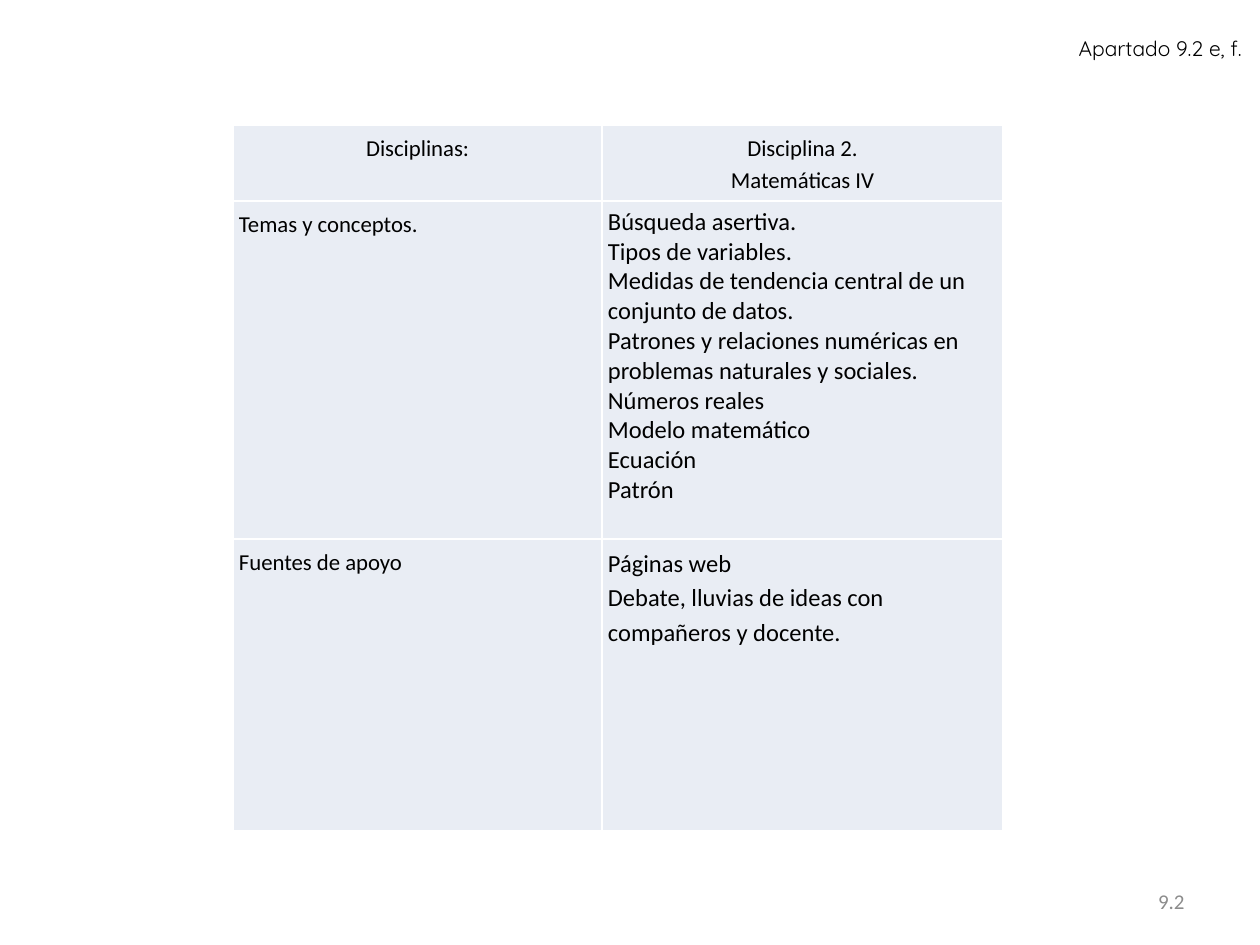
from lxml.etree import SubElement
from pptx import Presentation
from pptx.dml.color import RGBColor
from pptx.enum.text import MSO_ANCHOR, PP_ALIGN
from pptx.oxml.ns import qn
from pptx.util import Emu, Pt

PX = 914400 // 126

# Content: (paragraphs, size, alignment, line spacing) for each cell
LEFT, CENTER, RIGHT, JUSTIFY = PP_ALIGN.LEFT, PP_ALIGN.CENTER, PP_ALIGN.RIGHT, PP_ALIGN.JUSTIFY
ROWS = [
    [(["Disciplinas:"], 13, CENTER, 1.15),
     (["Disciplina 2.", "Matemáticas IV"], 13, CENTER, 1.15)],
    [(["Temas y conceptos."], 13, JUSTIFY, 1.15),
     (["Búsqueda asertiva.",
       "Tipos de variables.",
       "Medidas de tendencia central de un conjunto de datos.",
       "Patrones y relaciones numéricas en problemas naturales y sociales.",
       "Números reales",
       "Modelo matemático",
       "Ecuación",
       "Patrón"], 14, LEFT, 1.0)],
    [(["Fuentes de apoyo"], 13, LEFT, 1.15),
     (["Páginas web",
       "Debate, lluvias de ideas con compañeros y docente."], 14, LEFT, 1.15)],
]
COLUMN_WIDTHS = [369, 401]
ROW_HEIGHTS = [76, 338, 292]
TABLE_LEFT, TABLE_TOP = 233, 125
CELL_MARGIN = 6

# Text boxes: text, (left, top, width, height), anchor, font, colour
LABELS = [
    ("9.2", (903, 876, 294, 50), MSO_ANCHOR.MIDDLE, "Calibri", "8C8C8C"),
    ("Apartado 9.2 e, f. ", (246, 29, 1014, 38), MSO_ANCHOR.TOP, "Quicksand", "000000"),
]


def px(length):
    return Emu(length * PX)


def color(value):
    return RGBColor.from_string(value)


def write(text_frame, lines, size, font, font_color, alignment, spacing=1.0):
    text_frame.word_wrap = True
    paragraph_format = {"alignment": alignment, "line_spacing": spacing}
    font_format = {"name": font, "size": Pt(size)}
    for index, line in enumerate(lines):
        paragraph = text_frame.add_paragraph() if index else text_frame.paragraphs[0]
        run = paragraph.add_run()
        run.text = line
        for name, value in paragraph_format.items():
            setattr(paragraph, name, value)
        for name, value in font_format.items():
            setattr(run.font, name, value)
        run.font.color.rgb = color(font_color)


def format_cell(cell, fill, border):
    for side in ("left", "right", "top", "bottom"):
        setattr(cell, f"margin_{side}", px(CELL_MARGIN))
    # Borders must precede the fill in the cell properties
    properties = cell._tc.get_or_add_tcPr()
    for tag in ("a:lnL", "a:lnR", "a:lnT", "a:lnB"):
        line = SubElement(properties, qn(tag), w=str(Pt(1)))
        solid = SubElement(line, qn("a:solidFill"))
        SubElement(solid, qn("a:srgbClr"), val=border)
    cell.fill.solid()
    cell.fill.fore_color.rgb = color(fill)


presentation = Presentation()
presentation.slide_width, presentation.slide_height = px(1260), px(945)
slide = presentation.slides.add_slide(presentation.slide_layouts[6])

# Table
table = slide.shapes.add_table(
    len(ROWS), len(COLUMN_WIDTHS), px(TABLE_LEFT), px(TABLE_TOP),
    px(sum(COLUMN_WIDTHS)), px(sum(ROW_HEIGHTS))).table
table.first_row = table.horz_banding = False
for column, width in zip(table.columns, COLUMN_WIDTHS):
    column.width = px(width)
for row, height, contents in zip(table.rows, ROW_HEIGHTS, ROWS):
    row.height = px(height)
    for cell, (lines, size, alignment, spacing) in zip(row.cells, contents):
        format_cell(cell, "E9EDF4", "FFFFFF")
        write(cell.text_frame, lines, size, "Calibri", "000000", alignment, spacing)

# Section label and page number
for text, box, anchor, font, font_color in LABELS:
    text_frame = slide.shapes.add_textbox(*map(px, box)).text_frame
    text_frame.vertical_anchor = anchor
    write(text_frame, [text], 12, font, font_color, RIGHT)

presentation.save("out.pptx")
